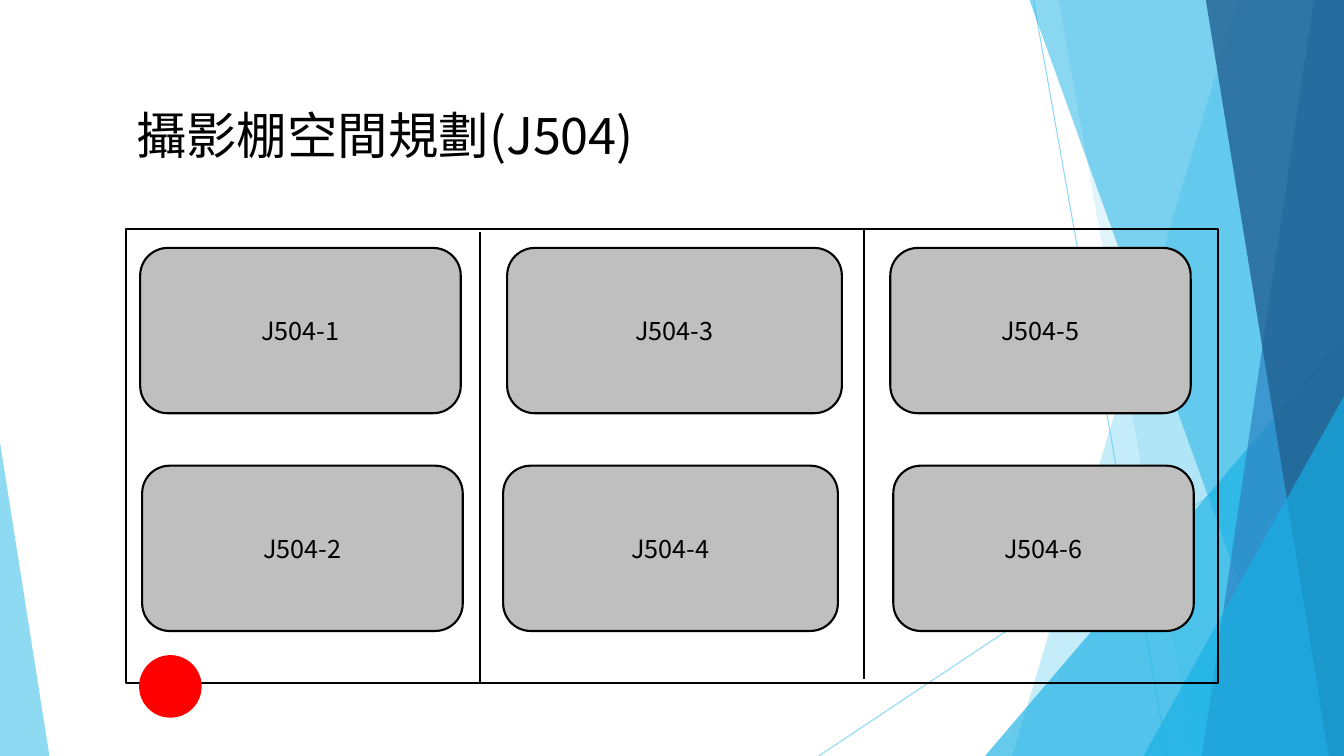
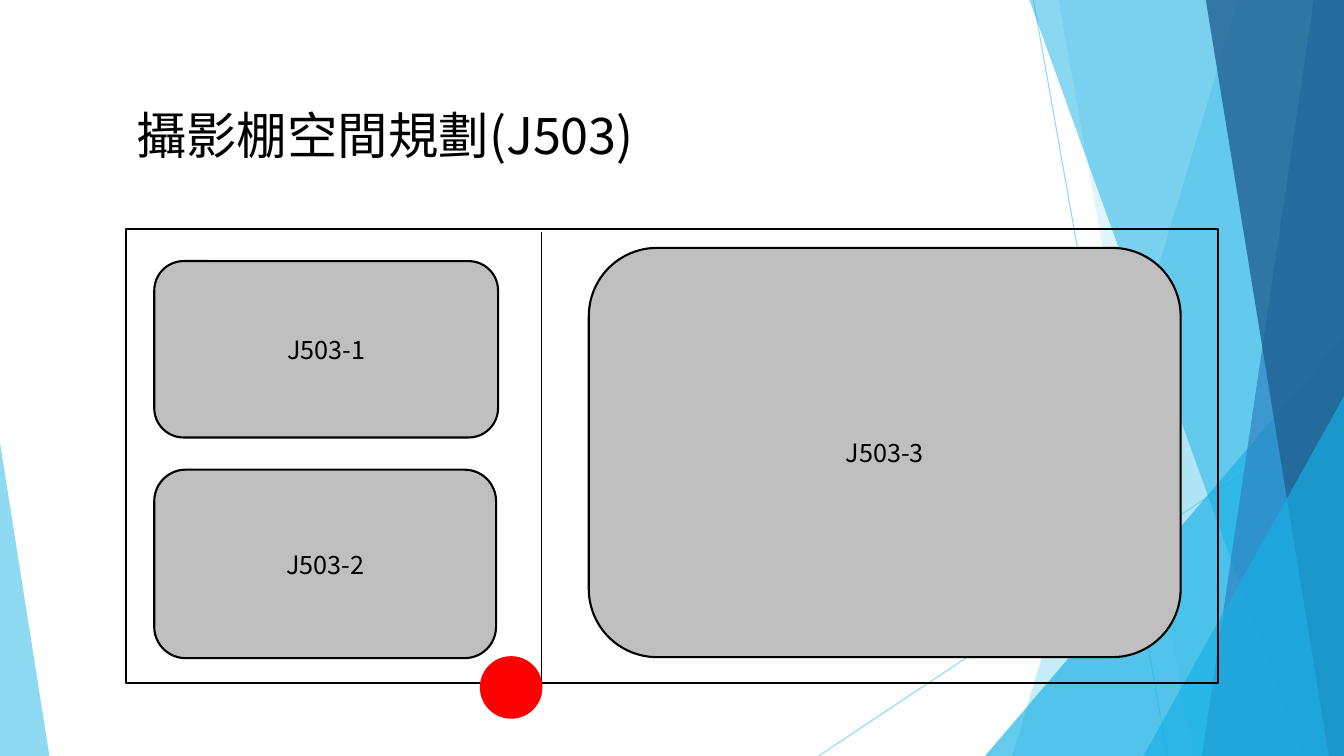
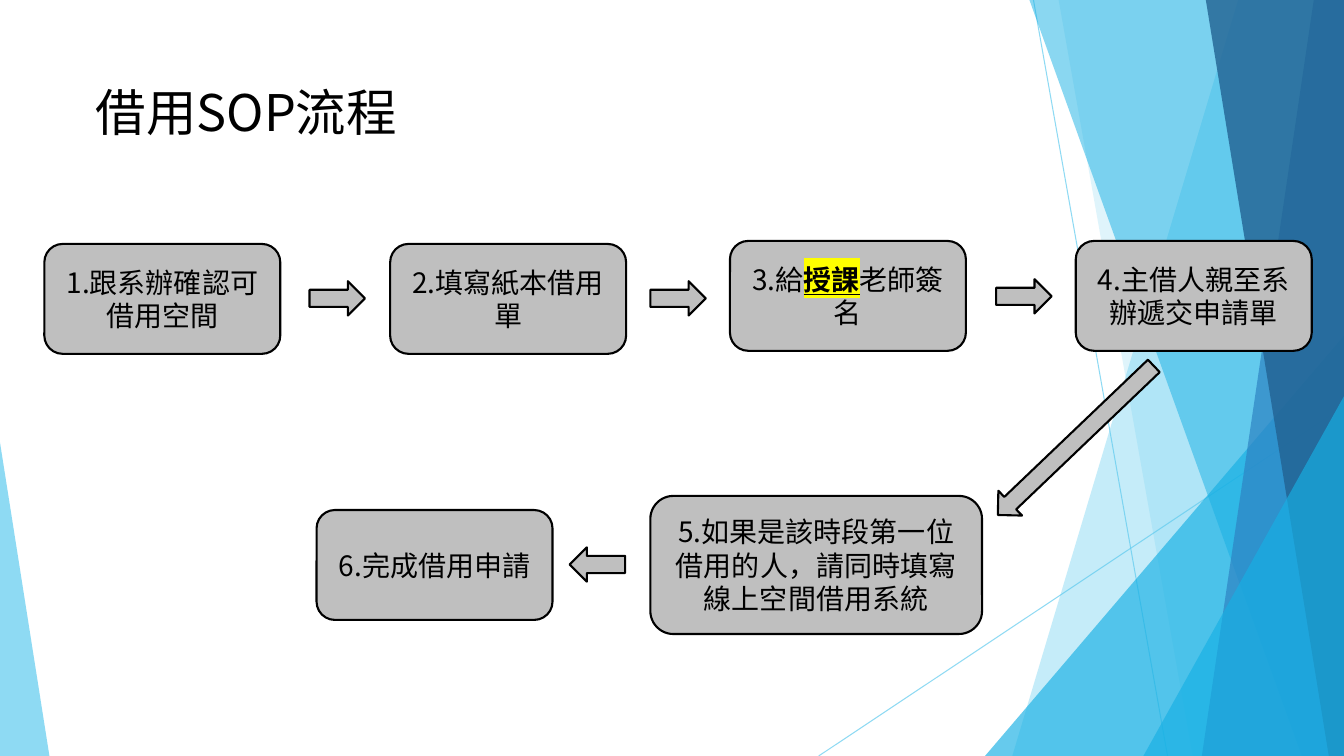
from dataclasses import dataclass

from lxml.etree import SubElement
from pptx import Presentation
from pptx.dml.color import RGBColor
from pptx.enum.shapes import MSO_CONNECTOR, MSO_SHAPE
from pptx.enum.text import MSO_ANCHOR, MSO_AUTO_SIZE, PP_ALIGN
from pptx.oxml.ns import qn
from pptx.util import Inches, Pt

BLACK = RGBColor(0x00, 0x00, 0x00)
GRAY = RGBColor(0xBF, 0xBF, 0xBF)
RED = RGBColor(0xFF, 0x00, 0x00)
SKY = RGBColor(0x5F, 0xCB, 0xEF)
CYAN = RGBColor(0x17, 0xB0, 0xE4)
BLUE = RGBColor(0x2E, 0x83, 0xC3)
NAVY = RGBColor(0x22, 0x62, 0x92)
YELLOW = "FFFF00"

FONT = "Noto Sans CJK SC"
COLUMNS, ROWS = 133.3, 75
CELL = Inches(0.1)
TITLE_ONLY = 5

TITLE_FRAME = {"word_wrap": True, "auto_size": MSO_AUTO_SIZE.NONE,
               "vertical_anchor": MSO_ANCHOR.TOP}
CARD_FRAME = {"word_wrap": True, "vertical_anchor": MSO_ANCHOR.MIDDLE}
EMPHASIS = {"bold": True, "underline": True}


@dataclass
class Box:
    """A rectangle measured in grid columns and rows."""
    left: float
    top: float
    width: float
    height: float

    def inside(self, left, top, width, height):
        """Return a box placed relative to this one."""
        return Box(self.left + left, self.top + top, width, height)

    def lengths(self):
        """Return left, top, width and height as slide lengths."""
        return [cells(n) for n in (self.left, self.top, self.width, self.height)]


TITLE = Box(12.5, 9.8, 108.3, 11.4)
FLOW_TITLE = Box(8.5, 7.5, 41.8, 11.4)
FLOOR = Box(12.5, 22.7, 108.3, 45.1)
FLOW = Box(4.4, 23.9, 125.7, 39)
STEP_SIZE = (23.4, 10.9)
ARROW_SIZE = (5.5, 3.4)
DOOR_SIZE = (6, 6)

RAYS = [(102.5, 0, 115.8, ROWS), (COLUMNS, 40.3, 81.2, ROWS)]
FACETS = [
    ("strip", (122.8, 100.4), SKY, 36),
    ("strip", (105, 118.3), SKY, 20),
    ("triangle", (97.7, 33.3, 35.6, 41.7, 1), CYAN, 66),
    ("strip", (102.1, 129.1), CYAN, 50),
    ("strip", (130.3, 119.2), BLUE, 70),
    ("strip", (119.6, 131.8), NAVY, 80),
    ("triangle", (113.4, 39.3, 19.9, 35.7, 1), CYAN, 66),
    ("triangle", (0, 43.9, 4.9, 31.1, 0), SKY, 70),
]

FLOOR_PLANS = [
    {
        "title": "攝影棚空間規劃(J504)",
        "rooms": [
            ("J504-1", (1.4, 1.9, 31.8, 16.4)),
            ("J504-2", (1.6, 23.5, 31.8, 16.4)),
            ("J504-3", (37.8, 1.9, 33.2, 16.4)),
            ("J504-4", (37.4, 23.5, 33.2, 16.4)),
            ("J504-5", (75.8, 1.9, 29.8, 16.4)),
            ("J504-6", (76.1, 23.5, 29.8, 16.4)),
        ],
        "walls": [(35.1, 0.3, 45.1), (73.2, 0, 44.7)],
        "door": (1.4, 42.4),
    },
    {
        "title": "攝影棚空間規劃(J503)",
        "rooms": [
            ("J503-1", (2.8, 3.2, 34.1, 17.5)),
            ("J503-2", (2.8, 23.9, 33.9, 18.7)),
            ("J503-3", (45.9, 1.9, 58.7, 40.6)),
        ],
        "walls": [(41.2, 0.3, 45.1)],
        "door": (35.2, 42.5),
    },
]

STEPS = [
    (["1.跟系辦確認可借用空間"], (0, 0.3, *STEP_SIZE)),
    (["2.填寫紙本借用單"], (34.3, 0.3, *STEP_SIZE)),
    (["3.給", "授課", "老師簽名"], (68, 0, *STEP_SIZE)),
    (["4.主借人親至系辦遞交申請單"], (102.3, 0, *STEP_SIZE)),
    (["5.如果是該時段第一位借用的人，請同時填寫線上空間借用系統"],
     (60.1, 25.3, 32.9, 13.7)),
    (["6.完成借用申請"], (27, 26.7, *STEP_SIZE)),
]
ARROWS = [
    ((26.3, 4, *ARROW_SIZE), 0),
    ((60.1, 4, *ARROW_SIZE), 0),
    ((94.4, 3.8, *ARROW_SIZE), 0),
    ((91.6, 18.1, 21.4, 3.4), 136.3),
    ((52.1, 30.4, *ARROW_SIZE), 180),
]


def cells(count):
    """Turn a number of grid cells into a slide length."""
    return round(count * CELL)


def apply_format(target, values):
    """Set each named attribute of the target."""
    for name, value in values.items():
        setattr(target, name, value)


def set_opacity(shape, percent):
    """Make the first colour of a shape partly transparent."""
    color = shape.element.find(".//" + qn("a:srgbClr"))
    SubElement(color, qn("a:alpha"), val=str(percent * 1000))


def paint(shape, fill=None, line=None):
    """Give a shape a flat fill and outline without shadow."""
    shape.shadow.inherit = False
    if fill is None:
        shape.fill.background()
    else:
        shape.fill.solid()
        shape.fill.fore_color.rgb = fill
    if line is None:
        shape.line.fill.background()
    else:
        shape.line.color.rgb = line
        shape.line.width = Pt(1.5)


def add_figure(slide, kind, box, fill=None, line=BLACK):
    """Add a painted preset shape in a box."""
    shape = slide.shapes.add_shape(kind, *box.lengths())
    paint(shape, fill, line)
    return shape


def add_rule(slide, ends, color, width):
    """Add a straight line between two grid points."""
    connector = slide.shapes.add_connector(
        MSO_CONNECTOR.STRAIGHT, *[cells(end) for end in ends])
    connector.line.color.rgb = color
    connector.line.width = Pt(width)
    SubElement(connector.element.find(qn("p:spPr")), qn("a:effectLst"))
    return connector


def add_run(paragraph, text, size, emphasized=False):
    """Add a black run, highlighted when emphasized."""
    run = paragraph.add_run()
    run.text = text
    apply_format(run.font, {"name": FONT, "size": Pt(size)})
    run.font.color.rgb = BLACK
    latin = run.font.fill and run._r.find(".//" + qn("a:latin"))
    SubElement(latin.getparent(), qn("a:ea"), typeface=FONT)
    if emphasized:
        apply_format(run.font, EMPHASIS)
        highlight = SubElement(latin.getparent(), qn("a:highlight"))
        SubElement(highlight, qn("a:srgbClr"), val=YELLOW)
        latin.addprevious(highlight)


def add_card(slide, box, texts, size):
    """Add a rounded card whose second text, if any, is emphasized."""
    card = add_figure(slide, MSO_SHAPE.ROUNDED_RECTANGLE, box, GRAY)
    apply_format(card.text_frame, CARD_FRAME)
    paragraph = card.text_frame.paragraphs[0]
    paragraph.alignment = PP_ALIGN.CENTER
    for index, text in enumerate(texts):
        add_run(paragraph, text, size, emphasized=index == 1)


def add_titled_slide(presentation, text, box):
    """Add a title-only slide and format its title in a box."""
    slide = presentation.slides.add_slide(presentation.slide_layouts[TITLE_ONLY])
    title = slide.shapes.title
    apply_format(title, dict(zip(("left", "top", "width", "height"), box.lengths())))
    apply_format(title.text_frame, TITLE_FRAME)
    paragraph = title.text_frame.paragraphs[0]
    paragraph.alignment = PP_ALIGN.LEFT
    add_run(paragraph, text, 36)
    return slide


def add_facet(slide, kind, place, color, opacity):
    """Add one translucent strip or triangle of the backdrop."""
    if kind == "strip":
        top_left, bottom_left = place
        builder = slide.shapes.build_freeform(cells(top_left), 0)
        corners = [(COLUMNS, 0), (COLUMNS, ROWS), (bottom_left, ROWS)]
        builder.add_line_segments([(cells(x), cells(y)) for x, y in corners], close=True)
        facet = builder.convert_to_shape()
        paint(facet, color)
    else:
        *bounds, apex = place
        facet = add_figure(slide, MSO_SHAPE.ISOSCELES_TRIANGLE, Box(*bounds), color, None)
        facet.adjustments[0] = apex
    set_opacity(facet, opacity)
    return facet


def move_backdrop_to_layout(slide):
    """Draw the backdrop and hand it to the layout that all slides share."""
    layout = slide.slide_layout
    for placeholder in list(layout.placeholders)[1:]:
        layout.shapes.element.remove(placeholder.element)
    rays = [add_rule(slide, ends, SKY, 0.75) for ends in RAYS]
    for ray in rays:
        set_opacity(ray, 70)
    facets = [add_facet(slide, *facet) for facet in FACETS]
    for position, shape in enumerate(rays + facets, start=2):
        layout.shapes.element.insert(position, shape.element)


def add_floor_plan(slide, box, rooms, walls, door):
    """Draw a framed floor plan with rooms, walls and a door mark."""
    add_figure(slide, MSO_SHAPE.RECTANGLE, box)
    for name, place in rooms:
        add_card(slide, box.inside(*place), [name], 18)
    for column, start, end in walls:
        x = box.left + column
        add_rule(slide, (x, box.top + start, x, box.top + end), BLACK, 1)
    add_figure(slide, MSO_SHAPE.OVAL, box.inside(*door, *DOOR_SIZE), RED, RED)


def add_flow(slide, box):
    """Draw the steps of borrowing and the arrows between them."""
    for texts, place in STEPS:
        add_card(slide, box.inside(*place), texts, 20)
    for place, rotation in ARROWS:
        arrow = add_figure(slide, MSO_SHAPE.RIGHT_ARROW, box.inside(*place), GRAY)
        arrow.rotation = rotation


def main():
    """Build and save the presentation."""
    presentation = Presentation()
    apply_format(presentation, {"slide_width": cells(COLUMNS),
                                "slide_height": cells(ROWS)})
    for plan in FLOOR_PLANS:
        slide = add_titled_slide(presentation, plan["title"], TITLE)
        add_floor_plan(slide, FLOOR, plan["rooms"], plan["walls"], plan["door"])
    flow_slide = add_titled_slide(presentation, "借用SOP流程", FLOW_TITLE)
    move_backdrop_to_layout(flow_slide)
    add_flow(flow_slide, FLOW)
    presentation.save("out.pptx")


if __name__ == "__main__":
    main()
